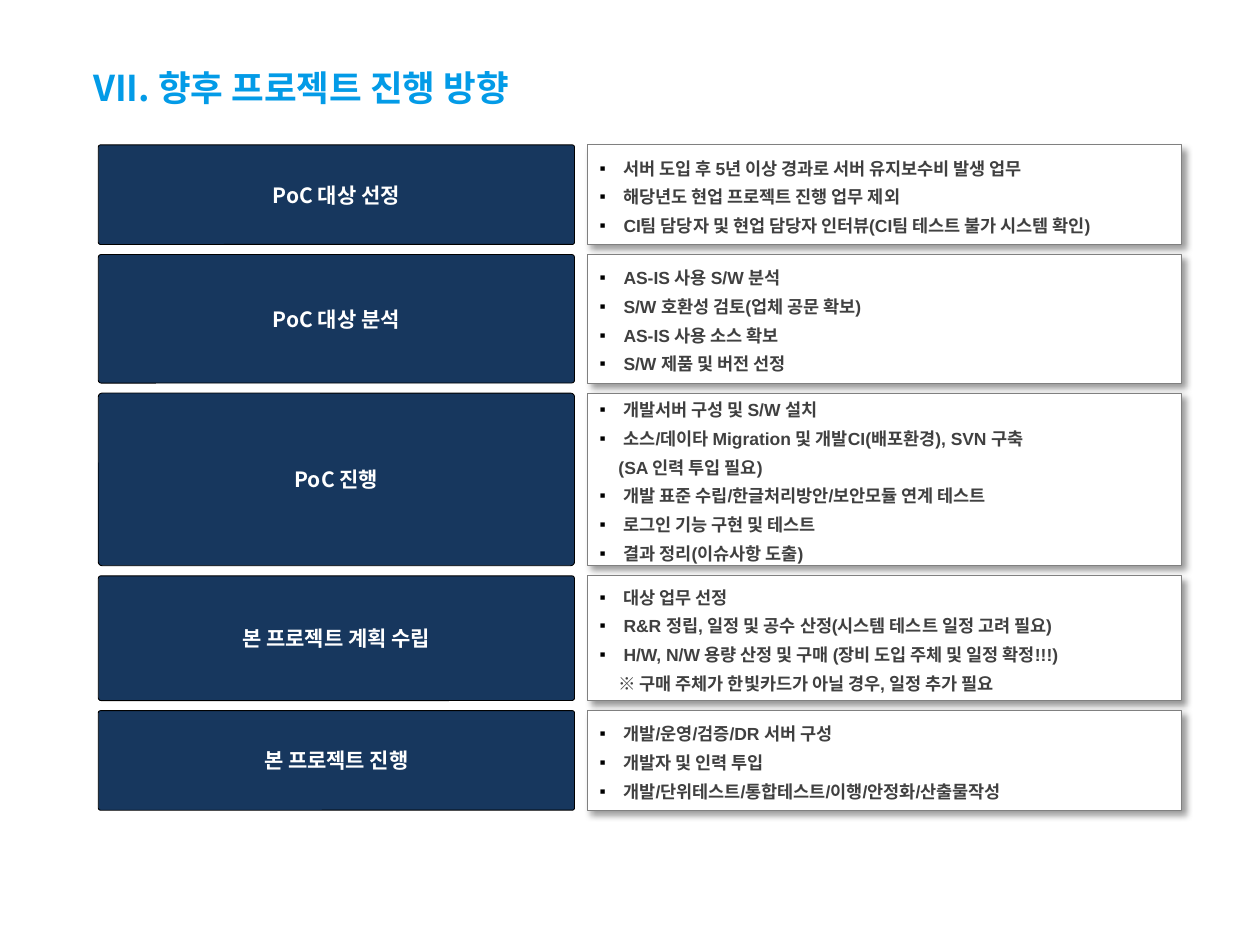
from dataclasses import dataclass

from lxml import etree
from pptx import Presentation
from pptx.dml.color import RGBColor
from pptx.enum import shapes, text
from pptx.oxml import ns
from pptx.util import Inches, Pt


@dataclass(frozen=True)
class Theme:
    title: RGBColor = RGBColor(0x03, 0x9B, 0xE7)
    navy: RGBColor = RGBColor(0x17, 0x37, 0x5E)
    black: RGBColor = RGBColor(0, 0, 0)
    white: RGBColor = RGBColor(0xFF, 0xFF, 0xFF)
    border: RGBColor = RGBColor(0x80, 0x80, 0x80)
    body: RGBColor = RGBColor(0x40, 0x40, 0x40)
    heading_font: str = "Noto Sans CJK KR"
    body_font: str = "Arial"
    title_size: float = 20.3
    label_size: float = 12
    body_size: float = 10


theme = Theme()
BULLET = "▪"
SHADOW = (
    f'<a:effectLst {ns.nsdecls("a")}>'
    f'<a:outerShdw blurRad="{Pt(4)}" dist="{Pt(3)}" dir="2700000" algn="tl" rotWithShape="0">'
    '<a:srgbClr val="000000"><a:alpha val="40000"/></a:srgbClr>'
    "</a:outerShdw></a:effectLst>"
)
LABEL_LEFT, LABEL_WIDTH = 0.78, 3.78
DETAIL_LEFT, DETAIL_WIDTH = 4.66, 4.72
FIRST_TOP, GAP = 1.15, 0.08

stages = [
    ("PoC 대상 선정", 0.79, [
        (BULLET, "서버 도입 후 5년 이상 경과로 서버 유지보수비 발생 업무"),
        (BULLET, "해당년도 현업 프로젝트 진행 업무 제외"),
        (BULLET, "CI팀 담당자 및 현업 담당자 인터뷰(CI팀 테스트 불가 시스템 확인)"),
    ]),
    ("PoC 대상 분석", 1.02, [
        (BULLET, "AS-IS 사용 S/W 분석"),
        (BULLET, "S/W 호환성 검토(업체 공문 확보)"),
        (BULLET, "AS-IS 사용 소스 확보"),
        (BULLET, "S/W 제품 및 버전 선정"),
    ]),
    ("PoC 진행", 1.37, [
        (BULLET, "개발서버 구성 및 S/W 설치"),
        (BULLET, "소스/데이타 Migration 및 개발CI(배포환경), SVN 구축"),
        (None, "(SA 인력 투입 필요)"),
        (BULLET, "개발 표준 수립/한글처리방안/보안모듈 연계 테스트"),
        (BULLET, "로그인 기능 구현 및 테스트"),
        (BULLET, "결과 정리(이슈사항 도출)"),
    ]),
    ("본 프로젝트 계획 수립", 0.99, [
        (BULLET, "대상 업무 선정"),
        (BULLET, "R&R 정립, 일정 및 공수 산정(시스템 테스트 일정 고려 필요)"),
        (BULLET, "H/W, N/W 용량 산정 및 구매 (장비 도입 주체 및 일정 확정!!!)"),
        (None, "※ 구매 주체가 한빛카드가 아닐 경우, 일정 추가 필요"),
    ]),
    ("본 프로젝트 진행", 0.79, [
        (BULLET, "개발/운영/검증/DR 서버 구성"),
        (BULLET, "개발자 및 인력 투입"),
        (BULLET, "개발/단위테스트/통합테스트/이행/안정화/산출물작성"),
    ]),
]


def write(para, content, font_name, size, color, align):
    para.text = content
    para.alignment = align
    para.font.name = font_name
    para.font.size = Pt(size)
    para.font.bold = True
    para.font.color.rgb = color


def add_panel(page, kind, left, top, width, height, fill, line):
    panel = page.shapes.add_shape(
        kind, Inches(left), Inches(top), Inches(width), Inches(height)
    )
    panel.shadow.inherit = False
    panel.fill.solid()
    panel.fill.fore_color.rgb = fill
    panel.line.color.rgb = line
    panel.line.width = Pt(0.5)
    panel.text_frame.word_wrap = True
    panel.text_frame.vertical_anchor = text.MSO_ANCHOR.MIDDLE
    return panel


deck = Presentation()
deck.slide_width, deck.slide_height = Inches(10), Inches(7.5)
page = deck.slides.add_slide(deck.slide_layouts[5])

title = page.shapes.title
title.left, title.top = Inches(0.74), Inches(0.46)
title.width, title.height = Inches(8.38), Inches(0.47)
frame = title.text_frame
frame.margin_left = 0
frame.auto_size = text.MSO_AUTO_SIZE.NONE
frame.vertical_anchor = text.MSO_ANCHOR.MIDDLE
write(frame.paragraphs[0], "VII. 향후 프로젝트 진행 방향", theme.heading_font,
      theme.title_size, theme.title, text.PP_ALIGN.LEFT)

top = FIRST_TOP
for name, height, details in stages:
    label = add_panel(page, shapes.MSO_SHAPE.ROUNDED_RECTANGLE, LABEL_LEFT, top,
                      LABEL_WIDTH, height, theme.navy, theme.black)
    label.adjustments[0] = 0.022
    write(label.text_frame.paragraphs[0], name, theme.heading_font,
          theme.label_size, theme.white, text.PP_ALIGN.CENTER)

    panel = add_panel(page, shapes.MSO_SHAPE.RECTANGLE, DETAIL_LEFT, top,
                      DETAIL_WIDTH, height, theme.white, theme.border)
    properties = panel._element.spPr
    properties.replace(properties.find(ns.qn("a:effectLst")), etree.fromstring(SHADOW))
    frame = panel.text_frame
    for index, (marker, content) in enumerate(details):
        para = frame.add_paragraph() if index else frame.paragraphs[0]
        para.line_spacing = 1.2
        para.space_before = Pt(2 if index else 0)
        layout = para._p.get_or_add_pPr()
        layout.set("marL", str(Inches(0.19 if marker else 0.15)))
        layout.set("indent", str(Inches(-0.19 if marker else 0)))
        if marker:
            color = etree.SubElement(layout, ns.qn("a:buClr"))
            etree.SubElement(color, ns.qn("a:srgbClr"), val=str(theme.black))
            etree.SubElement(layout, ns.qn("a:buFont"), typeface=theme.body_font)
            etree.SubElement(layout, ns.qn("a:buChar"), char=marker)
        write(para, content, theme.body_font, theme.body_size, theme.body, text.PP_ALIGN.LEFT)
    top += height + GAP

deck.save("out.pptx")
